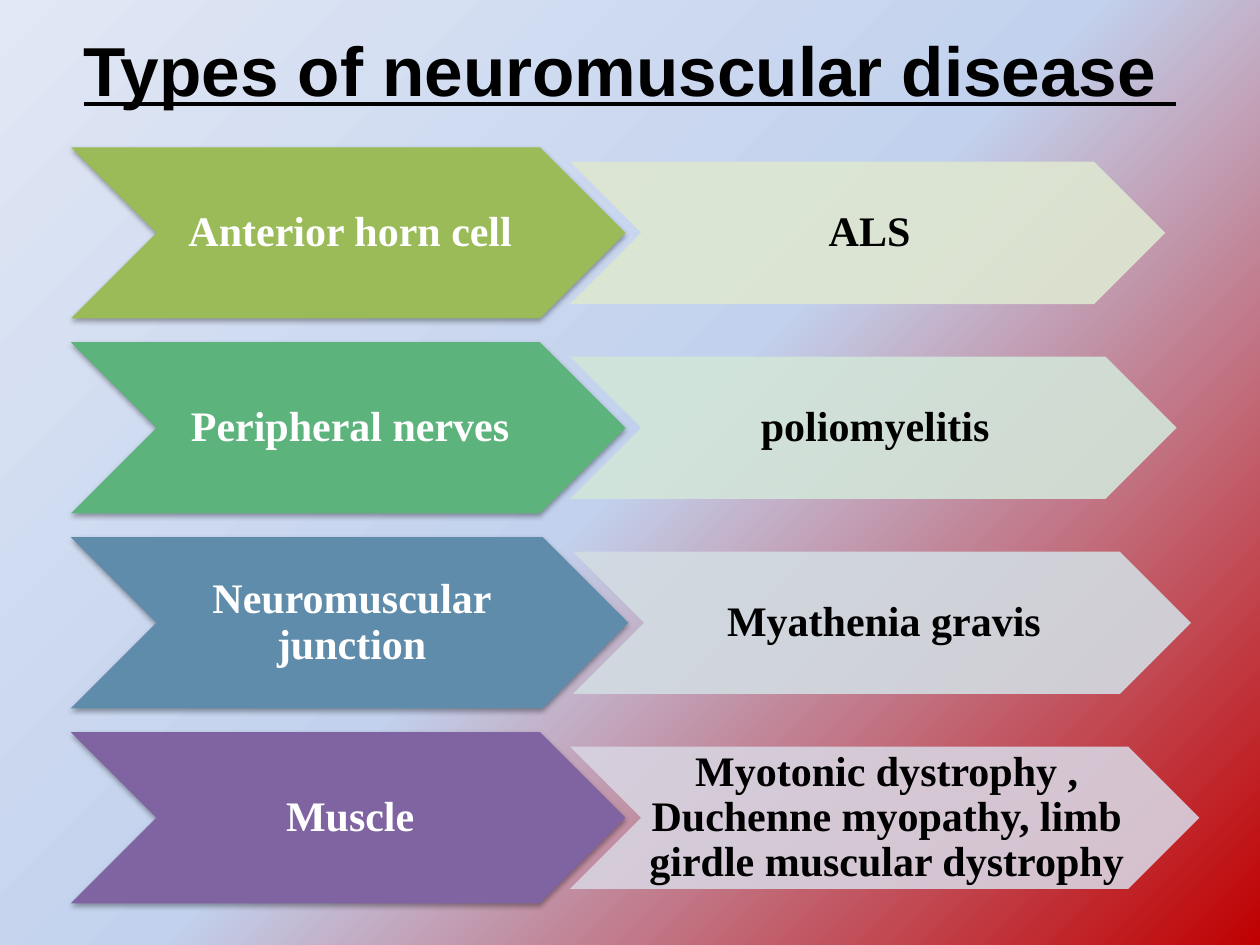
"""Build a slide pairing sites of neuromuscular disease with their examples."""
from dataclasses import dataclass

from lxml import etree
from pptx import Presentation
from pptx.dml.color import RGBColor
from pptx.enum.shapes import MSO_SHAPE as Shape
from pptx.enum.text import MSO_ANCHOR as Anchor, PP_ALIGN as Align
from pptx.oxml import parse_xml
from pptx.oxml.ns import nsdecls, qn
from pptx.util import Cm, Pt


@dataclass(frozen=True)
class Theme:
    title_font: str = "Arial"
    body_font: str = "Times New Roman"
    title_size: float = 39.6
    body_size: float = 24
    dark: str = "000000"
    light: str = "FFFFFF"
    backdrop: tuple = ((0, "C00000"), (50, "C2D1ED"), (100, "E1E8F5"))
    sites: tuple = ("9BBB59", "5CB37C", "608CAB", "8064A2")
    examples: tuple = ("DEE7D1", "D2E5D9", "D2DCE2", "D8D3E0")


def style_font(font, name, size, color):
    font.name, font.size, font.bold = name, Pt(size), True
    font.color.rgb = RGBColor.from_string(color)


def add_chevron(slide, left, top, width, height, text, fill, color):
    chevron = slide.shapes.add_shape(Shape.CHEVRON, Cm(left), Cm(top), Cm(width), Cm(height))
    chevron.shadow.inherit = False
    chevron.fill.solid()
    chevron.fill.fore_color.rgb = RGBColor.from_string(fill)
    chevron.line.fill.background()
    frame = chevron.text_frame
    frame.word_wrap, frame.vertical_anchor = True, Anchor.MIDDLE
    frame.margin_left, frame.margin_right = Cm(0.08), 0
    frame.margin_top = frame.margin_bottom = Cm(0.05)
    paragraph = frame.paragraphs[0]
    paragraph.text = text
    paragraph.alignment, paragraph.line_spacing = Align.CENTER, 0.9
    style_font(paragraph.font, theme.body_font, theme.body_size, color)
    return chevron


theme = Theme()
deck = Presentation()
deck.slide_width, deck.slide_height = Cm(25.4), Cm(19.05)
slide = deck.slides.add_slide(deck.slide_layouts[5])

stops = "".join(
    f'<a:gs pos="{percent * 1000}"><a:srgbClr val="{color}"/></a:gs>'
    for percent, color in theme.backdrop
)
slide.element.find(qn("p:cSld")).insert(0, parse_xml(
    f'<p:bg {nsdecls("p", "a")}><p:bgPr><a:gradFill rotWithShape="1"><a:gsLst>{stops}</a:gsLst>'
    '<a:path path="circle"><a:fillToRect l="100000" t="100000"/></a:path></a:gradFill>'
    '<a:effectLst/></p:bgPr></p:bg>'
))

title = slide.shapes.title
title.left, title.top, title.width, title.height = Cm(1.27), Cm(-0.2), Cm(22.86), Cm(3.18)
title.text_frame.vertical_anchor = Anchor.MIDDLE
heading = title.text_frame.paragraphs[0]
heading.text = "Types of neuromuscular disease "
heading.alignment = Align.CENTER
style_font(heading.font, theme.title_font, theme.title_size, theme.dark)
heading.font.underline = True

diseases = [
    ("Anterior horn cell", 11.18, "ALS"),
    ("Peripheral nerves", 11.18, "poliomyelitis"),
    ("Neuromuscular junction", 11.24, "Myathenia gravis"),
    ("Muscle", 11.18, "Myotonic dystrophy , Duchenne myopathy, limb girdle muscular dystrophy "),
]
site_left, first_top, row_pitch = 1.43, 2.97, 3.93
site_height, example_height, overlap = 3.45, 2.87, 1.12

for row, (site, site_width, example) in enumerate(diseases):
    top = first_top + row * row_pitch
    site_chevron = add_chevron(slide, site_left, top, site_width, site_height,
                               site, theme.sites[row], theme.light)
    effects = site_chevron.element.spPr.find(qn("a:effectLst"))
    effects.append(parse_xml(
        f'<a:outerShdw {nsdecls("a")} blurRad="{Pt(3.1)}" dist="{Pt(1.8)}" dir="5400000" '
        f'rotWithShape="0"><a:srgbClr val="{theme.dark}"><a:alpha val="35000"/></a:srgbClr>'
        '</a:outerShdw>'
    ))

    example_chevron = add_chevron(slide, site_left + site_width - overlap,
                                  top + (site_height - example_height) / 2,
                                  12 + 0.23 * row, example_height,
                                  example, theme.examples[row], theme.dark)
    tint = example_chevron.element.spPr.find(qn("a:solidFill"))[0]
    etree.SubElement(tint, qn("a:alpha"), val="90000")

deck.save("out.pptx")
